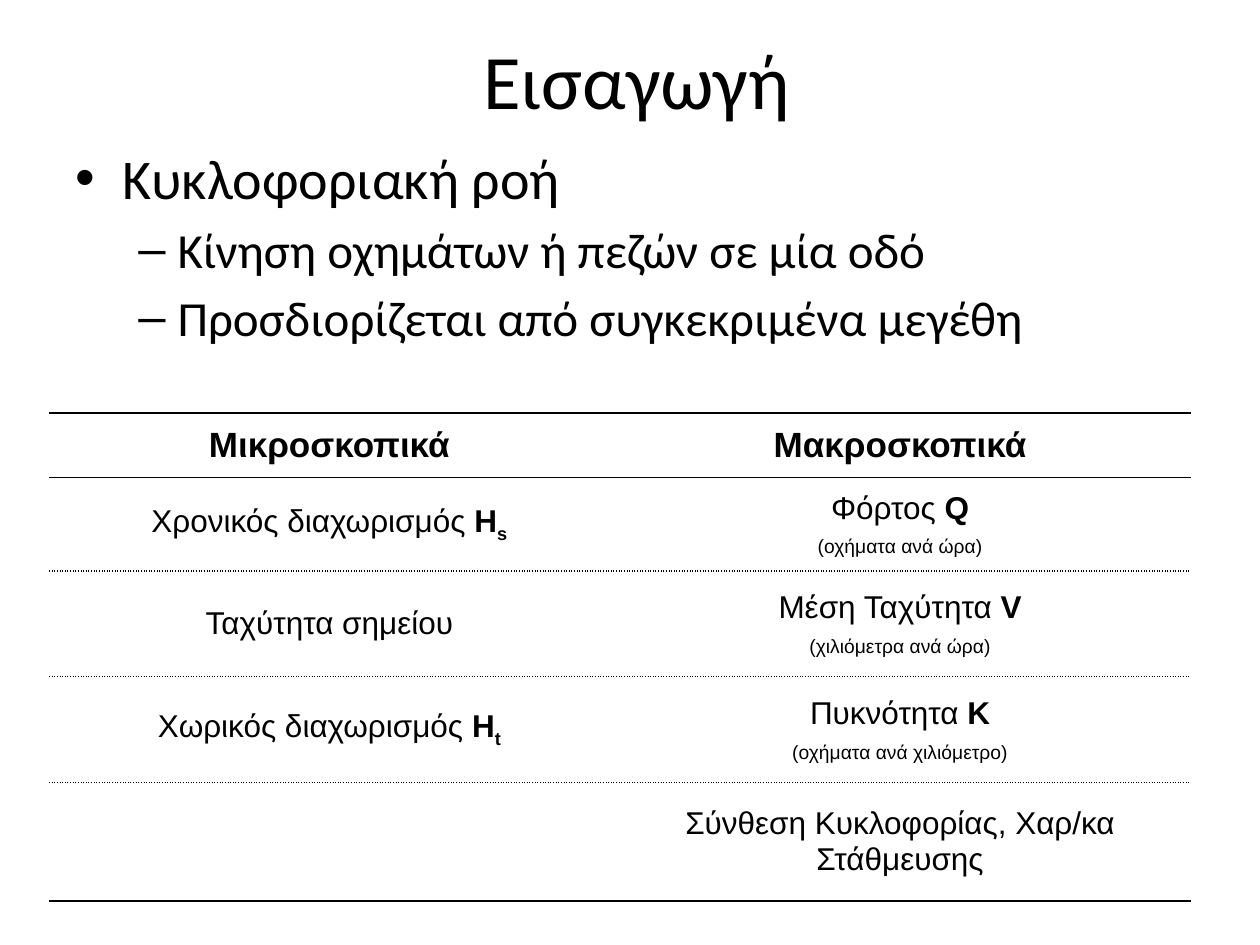
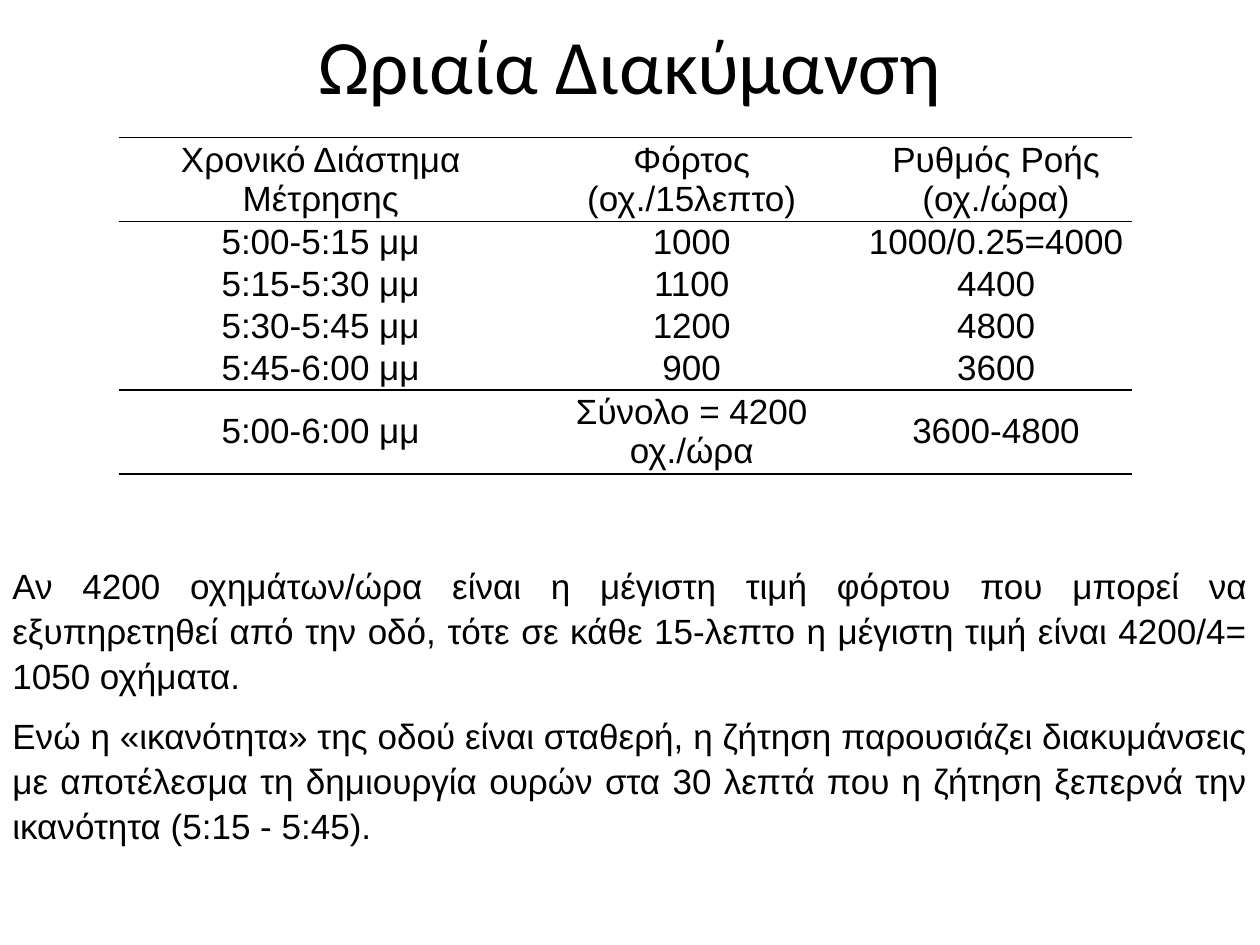
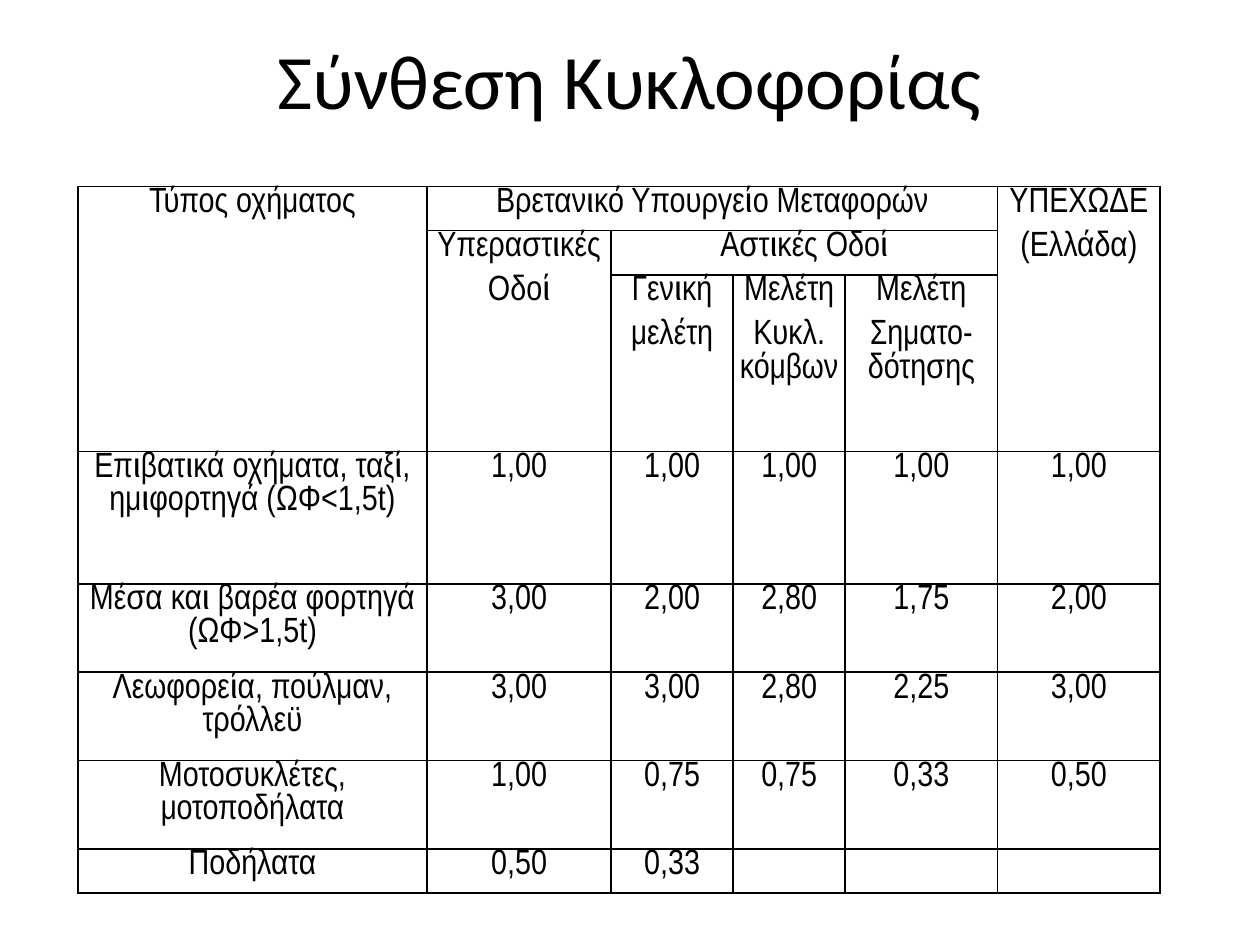
from lxml.etree import SubElement
from pptx import Presentation
from pptx.dml.color import RGBColor
from pptx.enum.text import MSO_ANCHOR, PP_ALIGN
from pptx.oxml.ns import qn
from pptx.util import Cm, Pt

BLACK = RGBColor(0x00, 0x00, 0x00)
TITLE = {"name": "Calibri", "size": Pt(44)}
BODY = {"name": "Calibri", "size": Pt(32)}
SUB_BODY = {"name": "Calibri", "size": Pt(28)}
PLAIN = {"name": "Arial", "size": Pt(20)}
CELL = {"name": "Arial", "size": Pt(18)}
UNIT = {"name": "Arial", "size": Pt(11)}
NARROW = {"name": "Arial Narrow", "size": Pt(20)}
CENTRE = {"alignment": PP_ALIGN.CENTER}
SIDES = "LRTB"


def set_all(target, values):
    for name, value in values.items():
        setattr(target, name, value)


def spacing(points):
    return CENTRE | {"space_before": Pt(points), "space_after": Pt(points)}


def bold(font):
    return font | {"bold": True}


class Deck:
    """Holds the presentation, its text style and the current page."""

    def __init__(self):
        self.file = Presentation()
        set_all(self.file, {"slide_width": Cm(25.4), "slide_height": Cm(19.05)})
        self.page = None

    def add_page(self, title, left, width, height):
        self.page = self.file.slides.add_slide(self.file.slide_layouts[6])
        self.text_box((left, 0, width, height), [[(title, TITLE)]], CENTRE)

    def fill_text(self, frame, paragraphs, layout):
        """Fill a frame; each paragraph is a list of (text, font[, baseline])."""
        for index, spans in enumerate(paragraphs):
            para = frame.add_paragraph() if index else frame.paragraphs[0]
            set_all(para, layout)
            for text, font, *baseline in spans:
                span = para.add_run()
                span.text = text
                set_all(span.font, font)
                span.font.color.rgb = BLACK
                for percent in baseline:
                    span.font._element.set("baseline", str(percent * 1000))

    def text_box(self, place, paragraphs, layout, anchor=MSO_ANCHOR.MIDDLE):
        box = self.page.shapes.add_textbox(*map(Cm, place))
        set_all(box.text_frame, {"word_wrap": True, "vertical_anchor": anchor})
        self.fill_text(box.text_frame, paragraphs, layout)
        return box

    def bullets(self, place, items):
        """Each item is (text, font, bullet, indent in cm, hanging in cm, space before)."""
        box = self.text_box(place, [[item[:2]] for item in items], {}, MSO_ANCHOR.TOP)
        for para, (_, _, mark, indent, hanging, before) in zip(box.text_frame.paragraphs, items):
            para.space_before = Pt(before)
            properties = para._p.get_or_add_pPr()
            properties.set("marL", str(Cm(indent)))
            properties.set("indent", str(-Cm(hanging)))
            SubElement(properties, qn("a:buFont"), typeface="Arial")
            SubElement(properties, qn("a:buChar"), char=mark)

    def table(self, place, widths, heights, rows, layout, borders, margin,
              anchor=MSO_ANCHOR.MIDDLE, spans=()):
        """layout(row) gives paragraph values, borders(row, column) a dict of side to dash."""
        frame = self.page.shapes.add_table(
            len(heights), len(widths), *map(Cm, place), Cm(sum(widths)), Cm(sum(heights)))
        grid = frame.table
        set_all(grid, {"first_row": False, "horz_banding": False})
        for column, width in zip(grid.columns, widths):
            column.width = Cm(width)
        for row, height in zip(grid.rows, heights):
            row.height = Cm(height)
        for row, first, last in spans:
            grid.cell(row, first).merge(grid.cell(row, last))
        for row, contents in enumerate(rows):
            for column, paragraphs in enumerate(contents):
                cell = grid.cell(row, column)
                set_all(cell, {"margin_left": Cm(margin), "margin_right": Cm(margin),
                               "margin_top": 0, "margin_bottom": 0,
                               "vertical_anchor": anchor})
                self.fill_text(cell.text_frame, paragraphs, layout(row))
                shown = borders(row, column)
                if cell.is_spanned:
                    shown = {side: shown[side] for side in "TB" if side in shown}
                self.cell_borders(cell, shown)
                cell.fill.background()

    def cell_borders(self, cell, dashes):
        properties = cell._tc.get_or_add_tcPr()
        for side in SIDES:
            line = SubElement(properties, qn(f"a:ln{side}"), w=str(Pt(1)))
            if side in dashes:
                fill = SubElement(line, qn("a:solidFill"))
                SubElement(fill, qn("a:srgbClr"), val=str(BLACK))
                SubElement(line, qn("a:prstDash"), val=dashes[side])
            else:
                SubElement(line, qn("a:noFill"))


def introduction(deck):
    deck.add_page("Εισαγωγή", 1.4, 22.86, 3.18)
    deck.bullets((1.27, 2.77, 22.86, 14.25), [
        ("Κυκλοφοριακή ροή", BODY, "•", 0.95, 0.95, 5.5),
        ("Κίνηση οχημάτων ή πεζών σε μία οδό", SUB_BODY, "–", 2.06, 0.79, 5),
        ("Προσδιορίζεται από συγκεκριμένα μεγέθη", SUB_BODY, "–", 2.06, 0.79, 5),
    ])

    def spacing_ratio(name, index):
        return [[(name, CELL), ("H", bold(CELL)), (index, bold(CELL), -25)]]

    def quantity(name, symbol, unit):
        return [[(name, CELL), (symbol, bold(CELL))], [(unit, UNIT)]]

    rows = [
        [[[(name, bold(PLAIN))]] for name in ("Μικροσκοπικά", "Μακροσκοπικά")],
        [spacing_ratio("Χρονικός διαχωρισμός ", "s"),
         quantity("Φόρτος ", "Q", "(οχήματα ανά ώρα)")],
        [[[("Ταχύτητα σημείου", CELL)]],
         quantity("Μέση Ταχύτητα ", "V", "(χιλιόμετρα ανά ώρα)")],
        [spacing_ratio("Χωρικός διαχωρισμός ", "t"),
         quantity("Πυκνότητα", " K", "(οχήματα ανά χιλιόμετρο)")],
        [[], [[("Σύνθεση Κυκλοφορίας, Χαρ/κα Στάθμευσης", CELL)]]],
    ]

    def borders(row, column):
        return {"T": "solid" if row < 2 else "sysDot",
                "B": "solid" if row in (0, 4) else "sysDot"}

    deck.table((0.99, 8.33), (11.3, 11.71), (1.3, 1.88, 2.13, 2.13, 2.39), rows,
               lambda row: spacing(3 if row else 6), borders, 0.13)


def hourly_variation(deck):
    deck.add_page("Ωριαία Διακύμανση", 0, 25.4, 2.59)
    texts = [
        ("Χρονικό Διάστημα Μέτρησης", "Φόρτος (οχ./15λεπτο)", "Ρυθμός Ροής (οχ./ώρα)"),
        ("5:00-5:15 μμ", "1000", "1000/0.25=4000"),
        ("5:15-5:30 μμ", "1100", "4400"),
        ("5:30-5:45 μμ", "1200", "4800"),
        ("5:45-6:00 μμ", "900", "3600"),
        ("5:00-6:00 μμ", "Σύνολο = 4200 οχ./ώρα", "3600-4800"),
    ]
    rows = [[[[(text, PLAIN)]] for text in row] for row in texts]

    def borders(row, column):
        return ({"T": "solid"} if row in (0, 1, 5) else {}) | (
            {"B": "solid"} if row in (0, 4, 5) else {})

    deck.table((2.39, 2.77), (8.15, 6.81, 5.46), [1.65] + [0.82] * 5, rows,
               lambda row: spacing(1 if row else 3), borders, 0.13)
    deck.text_box((0, 11.35, 25.4, 5.69), [[(text, PLAIN)] for text in (
        "Αν 4200 οχημάτων/ώρα είναι η μέγιστη τιμή φόρτου που μπορεί να εξυπηρετηθεί "
        "από την οδό, τότε σε κάθε 15-λεπτο η μέγιστη τιμή είναι 4200/4= 1050 οχήματα.",
        "Ενώ η «ικανότητα» της οδού είναι σταθερή, η ζήτηση παρουσιάζει διακυμάνσεις "
        "με αποτέλεσμα τη δημιουργία ουρών στα 30 λεπτά που η ζήτηση ξεπερνά την "
        "ικανότητα (5:15 - 5:45).",
    )], {"alignment": PP_ALIGN.JUSTIFY, "line_spacing": 1.07, "space_after": Pt(8.5)})


def traffic_composition(deck):
    deck.add_page("Σύνθεση Κυκλοφορίας", 0, 25.4, 3.18)
    texts = [
        ("Τύπος οχήματος", "Βρετανικό Υπουργείο Μεταφορών", "", "", "", "ΥΠΕΧΩΔΕ"),
        ("", "Υπεραστικές", "Αστικές Οδοί", "", "", "(Ελλάδα)"),
        ("", "Οδοί", "Γενική", "Μελέτη", "Μελέτη", ""),
        ("", "", "μελέτη", "Κυκλ.\nκόμβων", "Σηματο-δότησης", ""),
        ("Επιβατικά οχήματα, ταξί, ημιφορτηγά (ΩΦ<1,5t)",
         "1,00", "1,00", "1,00", "1,00", "1,00"),
        ("Μέσα και βαρέα φορτηγά (ΩΦ>1,5t)", "3,00", "2,00", "2,80", "1,75", "2,00"),
        ("Λεωφορεία, πούλμαν, τρόλλεϋ", "3,00", "3,00", "2,80", "2,25", "3,00"),
        ("Μοτοσυκλέτες, μοτοποδήλατα", "1,00", "0,75", "0,75", "0,33", "0,50"),
        ("Ποδήλατα", "0,50", "0,33", "", "", ""),
    ]
    rows = [[[[(line, NARROW)] for line in text.splitlines()] for text in row]
            for row in texts]
    heading_start = (0, 1, 2, 2, 2, 0)
    heading_end = 3

    def borders(row, column):
        """Each column heading is one open block from its start row to heading_end."""
        start = heading_start[column]
        shown = dict.fromkeys(SIDES, "solid")
        if start < row <= heading_end:
            del shown["T"]
        if start <= row < heading_end:
            del shown["B"]
        return shown

    deck.table((1.57, 3.76), (7.04, 3.71, 2.46, 2.26, 3.07, 3.28),
               [0.89] * 3 + [2.67] * 2 + [1.78] * 3 + [0.89], rows,
               lambda row: CENTRE | {"line_spacing": Pt(19)}, borders, 0.03,
               MSO_ANCHOR.TOP, spans=((0, 1, 4), (1, 2, 4)))


def main():
    deck = Deck()
    introduction(deck)
    hourly_variation(deck)
    traffic_composition(deck)
    deck.file.save("out.pptx")


if __name__ == "__main__":
    main()
